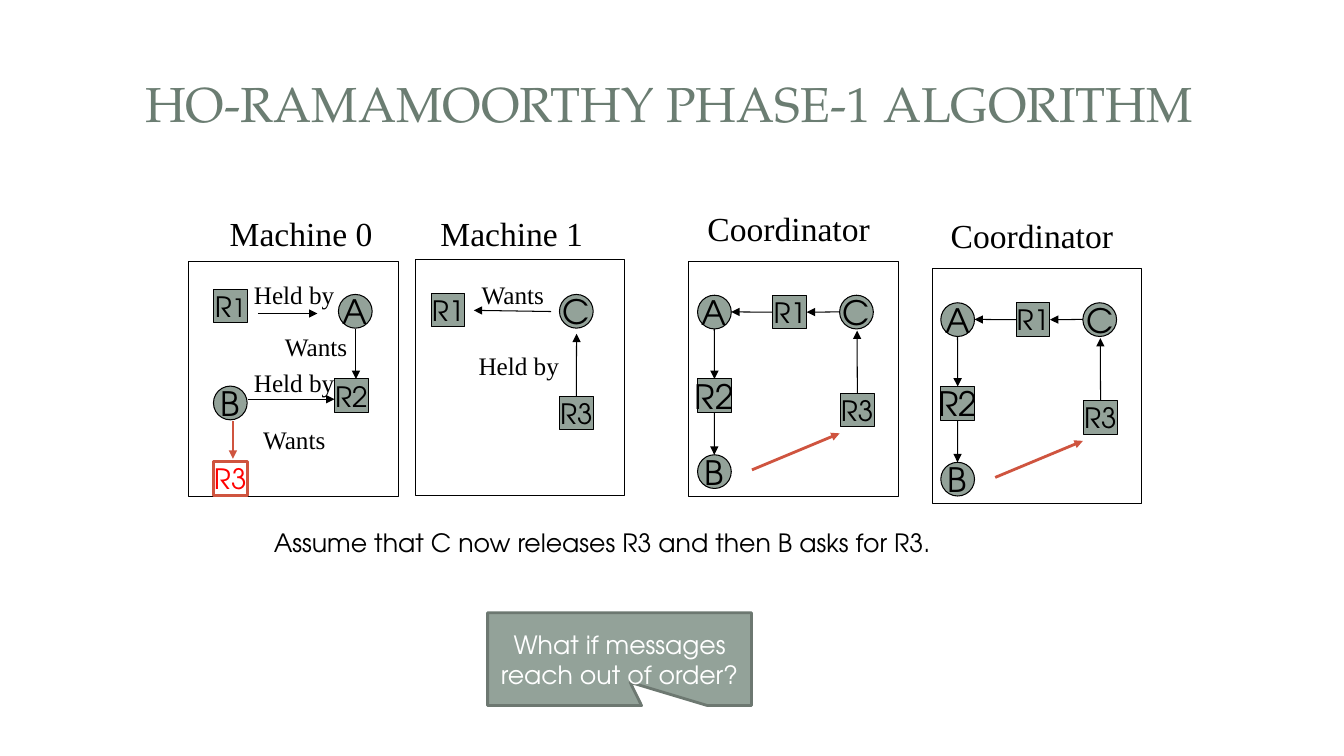
from dataclasses import dataclass, field
from typing import Any, Optional

import lxml.etree
import pptx
import pptx.dml.color
import pptx.enum.shapes
import pptx.enum.text
import pptx.oxml.ns
import pptx.util

Cm = pptx.util.Cm
Kind = pptx.enum.shapes.MSO_SHAPE
Align = pptx.enum.text.PP_ALIGN
Anchor = pptx.enum.text.MSO_ANCHOR

HUES = {"ink": "000000", "white": "FFFFFF", "sage": "93A299", "edge": "6D7871",
        "title": "6B7D72", "rust": "CF543F", "red": "FF0000"}
SANS, SERIF, HEAD = "TeX Gyre Adventor", "Times New Roman", "TeX Gyre Pagella"
NODE = 0.85
BOX = (5.29, 5.93)
WIDE = {"Held by": 2.57, "Wants": 2.11}
TOP, LEFT, BOTTOM, RIGHT = range(4)


# Parts of a panel, placed from the panel's top left corner, in cm
@dataclass
class Node:
    name: str
    x: float
    y: float
    size: int = 20
    last: int = 0  # size of the final character, if it differs
    fill: str = "sage"
    edge: str = "ink"
    width: float = 0.75
    ink: str = "ink"


@dataclass
class Arrow:
    start: tuple[float, float]
    end: tuple[float, float]
    hue: str = "ink"
    width: float = 0.75
    tail: Optional[tuple[str, int]] = None  # node and side where it begins
    head: Optional[tuple[str, int]] = None  # node and side where it ends


@dataclass
class Panel:
    title: str
    shift: tuple[float, float]
    wide: float
    x: float
    y: float
    nodes: list[Node]
    arrows: list[Arrow]
    notes: list[tuple[str, float, float]] = field(default_factory=list)


def shade(name: str) -> pptx.dml.color.RGBColor:
    return pptx.dml.color.RGBColor.from_string(HUES[name])


def write(shape: Any, runs: list[tuple[str, float]], face: str, hue: str,
          frame: dict[str, Any], align: Any = Align.LEFT) -> None:
    for key, value in frame.items():
        setattr(shape.text_frame, key, value)
    para = shape.text_frame.paragraphs[0]
    para.alignment = align
    for text, size in runs:
        run = para.add_run()
        run.text = text
        look = {"name": face, "size": pptx.util.Pt(size)}
        for key, value in look.items():
            setattr(run.font, key, value)
        run.font.color.rgb = shade(hue)


def label(slide: Any, text: str, x: float, y: float, w: float, h: float,
          size: float, face: str = SERIF) -> None:
    box = slide.shapes.add_textbox(Cm(x), Cm(y), Cm(w), Cm(h))
    write(box, [(text, size)], face, "ink", {"word_wrap": False})


def block(slide: Any, kind: Any, x: float, y: float, w: float, h: float,
          fill: str, edge: str, width: float) -> Any:
    shape = slide.shapes.add_shape(kind, Cm(x), Cm(y), Cm(w), Cm(h))
    shape.shadow.inherit = False
    shape.fill.solid()
    shape.fill.fore_color.rgb = shade(fill)
    shape.line.color.rgb = shade(edge)
    shape.line.width = pptx.util.Pt(width)
    return shape


def place(slide: Any, node: Node, x: float, y: float) -> Any:
    kind = Kind.RECTANGLE if node.name[0] == "R" else Kind.FLOWCHART_CONNECTOR
    shape = block(slide, kind, x + node.x, y + node.y, NODE, NODE,
                  node.fill, node.edge, node.width)
    runs = [(node.name, node.size)]
    if node.last:
        runs = [(node.name[:-1], node.size), (node.name[-1], node.last)]
    frame = {"word_wrap": False, "vertical_anchor": Anchor.MIDDLE}
    write(shape, runs, SANS, node.ink, frame, Align.CENTER)
    return shape


def link(slide: Any, arrow: Arrow, x: float, y: float, found: dict[str, Any]) -> None:
    (ax, ay), (bx, by) = arrow.start, arrow.end
    line = slide.shapes.add_connector(
        pptx.enum.shapes.MSO_CONNECTOR.STRAIGHT,
        Cm(x + ax), Cm(y + ay), Cm(x + bx), Cm(y + by))
    if arrow.tail:
        line.begin_connect(found[arrow.tail[0]], arrow.tail[1])
    if arrow.head:
        line.end_connect(found[arrow.head[0]], arrow.head[1])
    line.line.color.rgb = shade(arrow.hue)
    line.line.width = pptx.util.Pt(arrow.width)
    qn = pptx.oxml.ns.qn
    props = line._element.spPr
    lxml.etree.SubElement(props.find(qn("a:ln")), qn("a:tailEnd"), type="triangle")
    lxml.etree.SubElement(props, qn("a:effectLst"))


def draw(slide: Any, panel: Panel) -> None:
    x, y = panel.x, panel.y
    block(slide, Kind.RECTANGLE, x, y, *BOX, "white", "ink", 0.75)
    dx, dy = panel.shift
    label(slide, panel.title, x + dx, y + dy, panel.wide, 1.27, 24)
    found = {node.name: place(slide, node, x, y) for node in panel.nodes}
    for arrow in panel.arrows:
        link(slide, arrow, x, y, found)
    for text, nx, ny in panel.notes:
        label(slide, text, x + nx, y + ny, WIDE[text], 1.02, 18)


def leader(x: float, y: float) -> Panel:
    """The coordinator's view, which is shown at two places."""
    return Panel(
        "Coordinator", (0.22, -1.47), 4.6, x, y,
        [Node("A", 0.22, 0.86, 24), Node("R1", 2.12, 0.86), Node("C", 3.8, 0.86, 24),
         Node("R2", 0.22, 2.97, 24), Node("B", 0.22, 4.88, 24), Node("R3", 3.82, 3.33)],
        [Arrow((2.12, 1.28), (1.07, 1.28), tail=("R1", LEFT)),
         Arrow((3.8, 1.28), (2.97, 1.28), head=("R1", RIGHT)),
         Arrow((0.64, 1.71), (0.64, 2.97), head=("R2", TOP)),
         Arrow((0.64, 3.82), (0.64, 4.88), tail=("R2", BOTTOM)),
         Arrow((4.24, 3.33), (4.24, 1.75), tail=("R3", TOP)),
         Arrow((1.59, 5.26), (3.8, 4.34), "rust", 2)])


PANELS = [
    Panel("Machine 0", (0.79, -1.35), 4.11, 4.75, 6.58,
          [Node("A", 3.78, 0.84, 24), Node("R1", 0.63, 0.71, last=18),
           Node("R2", 3.68, 2.97), Node("B", 0.63, 3.15, 24),
           Node("R3", 0.63, 5.05, fill="white", edge="rust", width=2, ink="red")],
          [Arrow((1.5, 3.48), (3.68, 3.48)), Arrow((1.75, 1.32), (3.25, 1.32)),
           Arrow((4.22, 1.7), (4.22, 2.97)),
           Arrow((1.12, 4.04), (1.12, 4.98), "rust", 2)],
          [("Held by", 1.4, 0.33), ("Held by", 1.4, 2.56),
           ("Wants", 2.18, 1.65), ("Wants", 1.63, 3.99)]),
    Panel("Machine 1", (0.39, -1.32), 4.11, 10.46, 6.55,
          [Node("R1", 0.41, 0.84), Node("C", 3.64, 0.87, 24), Node("R3", 3.64, 3.43)],
          [Arrow((3.43, 1.3), (1.48, 1.27)),
           Arrow((4.07, 3.43), (4.07, 1.86), tail=("R3", TOP))],
          [("Wants", 1.43, 0.36), ("Held by", 1.35, 2.16)]),
    leader(17.36, 6.58),
    leader(23.49, 6.77),
]


def main() -> None:
    deck = pptx.Presentation()
    deck.slide_width, deck.slide_height = Cm(33.87), Cm(19.05)
    slide = deck.slides.add_slide(deck.slide_layouts[6])
    middle = {"word_wrap": True, "vertical_anchor": Anchor.MIDDLE}

    # Title
    title = slide.shapes.add_textbox(Cm(1.57), Cm(1.14), Cm(30.61), Cm(2.9))
    write(title, [("HO-RAMAMOORTHY PHASE-1 ALGORITHM", 35)], HEAD, "title",
          middle, Align.CENTER)

    # Resource graphs
    for panel in PANELS:
        draw(slide, panel)

    # Remark and question
    label(slide, "Assume that C now releases R3 and then B asks for R3.",
          6.65, 13.16, 17.3, 1.02, 18, SANS)
    call = block(slide, Kind.RECTANGULAR_CALLOUT, 12.29, 15.44, 6.65, 2.34,
                 "sage", "edge", 2)
    call.adjustments[0], call.adjustments[1] = 0.04, 0.25
    write(call, [("What if messages reach out of order?", 18)], SANS, "white",
          middle, Align.CENTER)

    deck.save("out.pptx")


if __name__ == "__main__":
    main()
